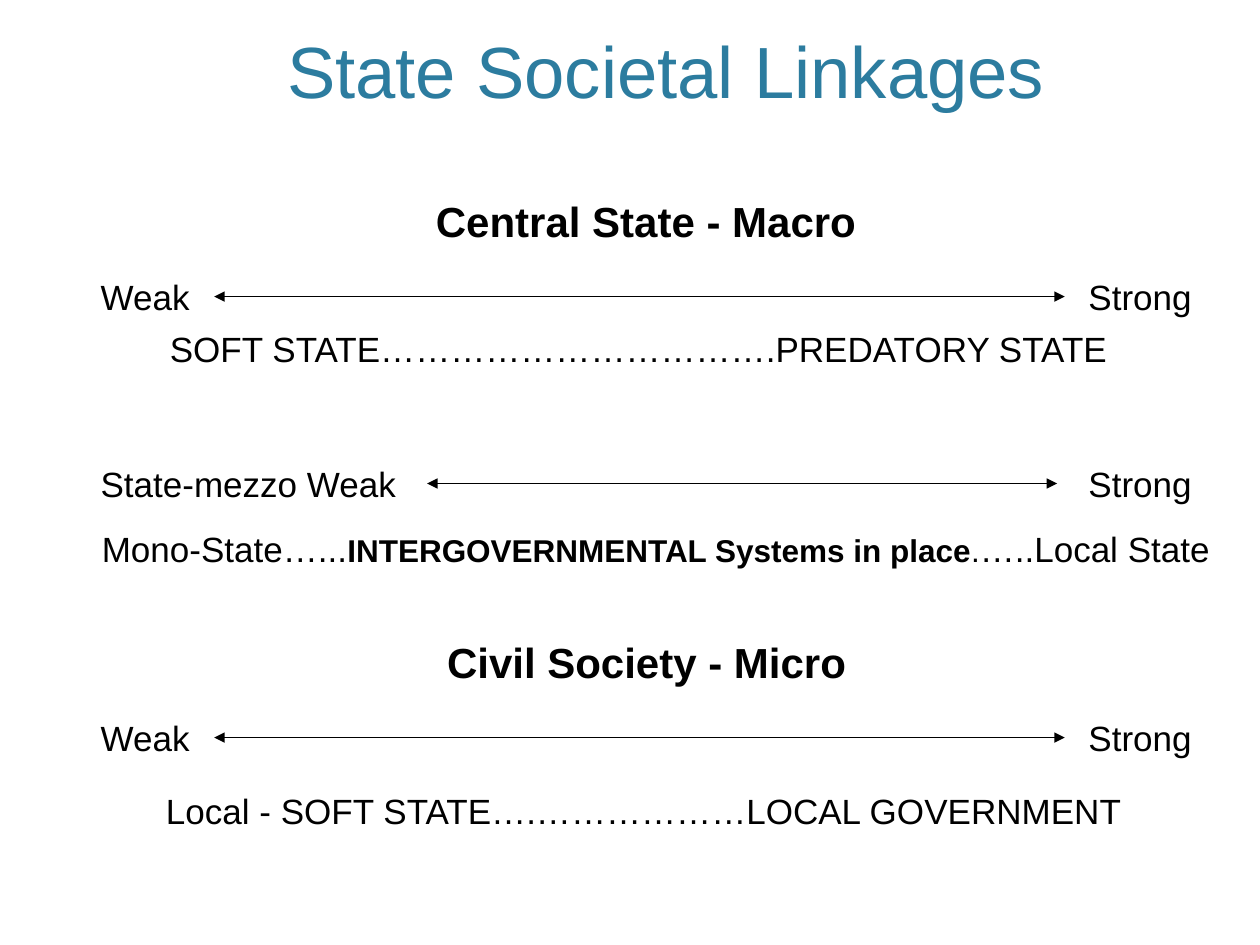
from lxml import etree
from pptx import Presentation
from pptx.dml.color import RGBColor
from pptx.enum.shapes import MSO_CONNECTOR
from pptx.enum.text import MSO_ANCHOR, MSO_AUTO_SIZE, PP_ALIGN
from pptx.oxml.ns import qn
from pptx.util import Pt

LINE = MSO_CONNECTOR.STRAIGHT
BOTTOM, TOP = MSO_ANCHOR.BOTTOM, MSO_ANCHOR.TOP
CENTER, LEFT = PP_ALIGN.CENTER, PP_ALIGN.LEFT
FIT, FIXED = MSO_AUTO_SIZE.SHAPE_TO_FIT_TEXT, MSO_AUTO_SIZE.NONE
COLORS = {"title": "2C7C9F", "ink": "000000"}
FONT = "Arial"
ROW = 31


def add_text(shapes, box, runs, color="ink", title=False):
    """Place one line of text made of (wording, size, bold) runs."""
    shape = shapes.add_textbox(*map(Pt, box))
    frame = shape.text_frame
    frame.word_wrap = title
    frame.auto_size = FIXED if title else FIT
    frame.vertical_anchor = BOTTOM if title else TOP
    para = frame.paragraphs[0]
    para.alignment = CENTER if title else LEFT
    for words, size, bold in runs:
        run = para.add_run()
        run.text = words
        font = run.font
        font.name, font.size, font.bold = FONT, Pt(size), bold
        font.color.rgb = RGBColor.from_string(COLORS[color])


def add_arrow(shapes, start, end, y):
    """Draw a level line with an arrowhead at both ends."""
    arrow = shapes.add_connector(LINE, Pt(start), Pt(y), Pt(end), Pt(y))
    arrow.line.width = Pt(0.75)
    arrow.line.color.rgb = RGBColor.from_string(COLORS["ink"])
    stroke = arrow.line._get_or_add_ln()
    for tag in ("a:headEnd", "a:tailEnd"):
        etree.SubElement(stroke, qn(tag), type="triangle")
    etree.SubElement(arrow._element.spPr, qn("a:effectLst"))


def add_scale(slide, box, weak, width, start, end):
    """Group a weak-to-strong scale inside its box."""
    left, top, span, high = box
    shapes = slide.shapes.add_group_shape().shapes
    add_text(shapes, (left, top, width, high), [(weak, 20, False)])
    add_text(shapes, (left + span - 73.4, top, 73.4, high), [("Strong", 20, False)])
    add_arrow(shapes, left + start, left + end, top + high / 2)


def build():
    """Build and save the slide."""
    deck = Presentation()
    deck.slide_width, deck.slide_height = Pt(720), Pt(540)
    slide = deck.slides.add_slide(deck.slide_layouts[6])
    shapes = slide.shapes

    add_text(shapes, (91.4, 18, 578.2, 50.4),
             [("State Societal Linkages", 41.4, False)], "title", True)

    heads = (("Central State - Macro", 242, 108, 255),
             ("Civil Society - Micro", 248.4, 360, 242.6))
    for words, left, top, width in heads:
        add_text(shapes, (left, top, width, 36), [(words, 24, True)])

    scales = ((154, "Weak", 65.5, 72, 558),
              (260.8, "State-mezzo Weak", 183.6, 193.7, 553.7),
              (406, "Weak", 65.5, 72, 558))
    for top, weak, width, start, end in scales:
        add_scale(slide, (50.4, top, 637.9, ROW), weak, width, start, end)

    notes = (
        (90, 183.6, 558.7, [("SOFT STATE…………………………….PREDATORY STATE", 20, False)]),
        (51.1, 298, 648, [("Mono-State…...", 20, False),
                          ("INTERGOVERNMENTAL Systems in place", 18, True),
                          (".", 18, False),
                          ("…..Local State", 20, False)]),
        (87.8, 447.8, 563.8, [("Local - SOFT STATE….………………LOCAL GOVERNMENT", 20, False)]),
    )
    for left, top, width, runs in notes:
        add_text(shapes, (left, top, width, ROW), runs)

    deck.save("out.pptx")


if __name__ == "__main__":
    build()
